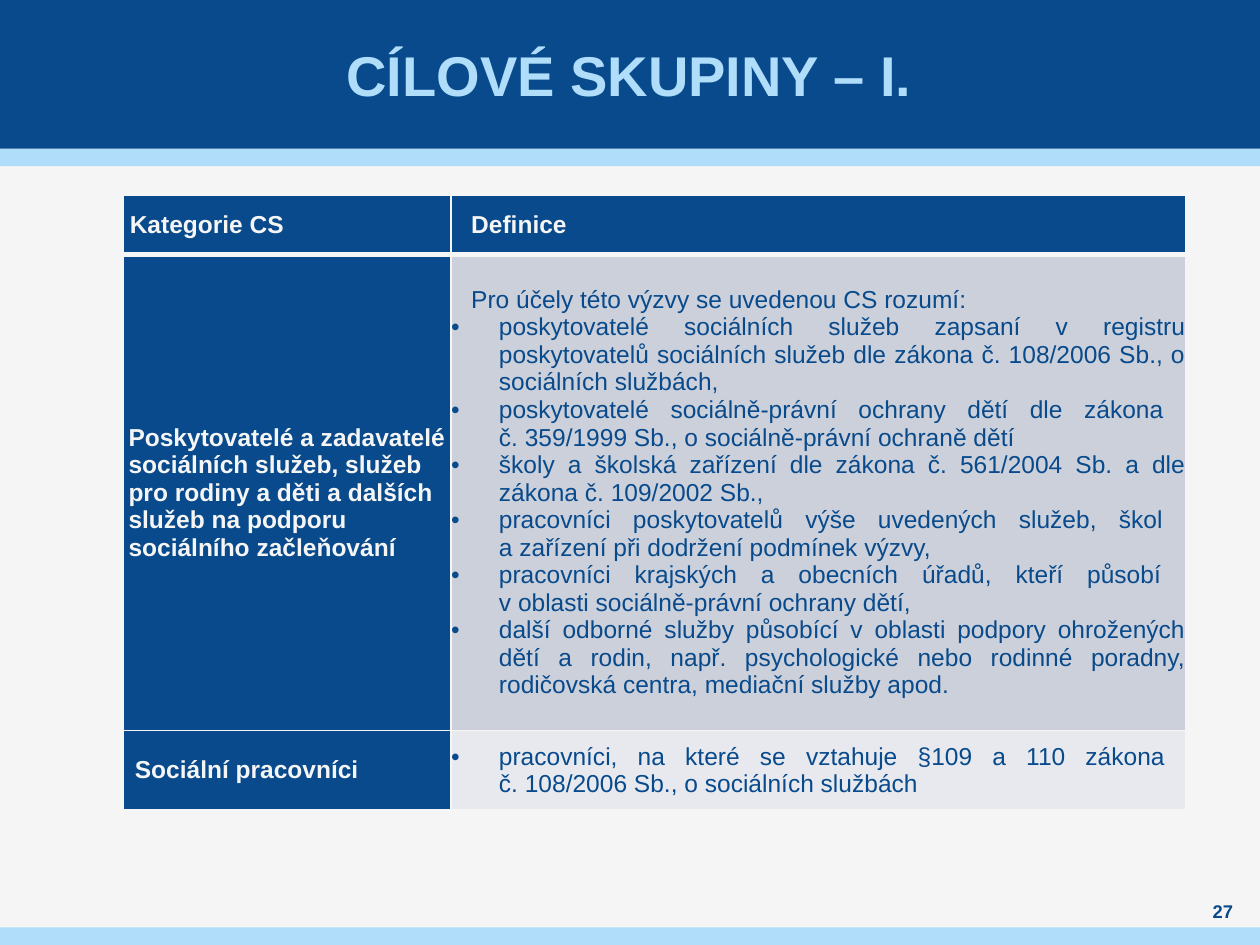
from dataclasses import dataclass

from lxml.etree import SubElement, fromstring
from pptx import Presentation
from pptx.dml.color import RGBColor
from pptx.enum.shapes import MSO_SHAPE as Shape
from pptx.enum.text import MSO_ANCHOR as Anchor, PP_ALIGN as Align
from pptx.oxml.ns import nsdecls, qn
from pptx.util import Inches, Pt

COLORS = {
    "navy": "084A8B",
    "sky": "AFDDFA",
    "paper": "F5F5F5",
    "gray": "CCD0DA",
    "light_gray": "E7E9EE",
}
FONT = "Arial"
BULLET_INDENT = 0.38


@dataclass
class Band:
    top: float
    height: float
    color: str


@dataclass
class Line:
    text: str
    indent: float = BULLET_INDENT
    bullet: bool = True


@dataclass
class Cell:
    lines: list[Line]
    fill: str
    color: str = "paper"
    bold: bool = True
    align: Align = Align.LEFT
    bottom_border: float = 1


def label(text: str, indent: float, **options) -> Cell:
    return Cell([Line(text, indent, False)], "navy", **options)


def definition(lines: list[Line], fill: str) -> Cell:
    return Cell(lines, fill, "navy", False, Align.JUSTIFY)


BANDS = [Band(1.18, 0.14, "sky"), Band(0, 1.18, "navy"), Band(7.36, 0.14, "sky")]
COLUMN_WIDTHS = [2.6, 5.83]
ROW_HEIGHTS = [0.47, 3.78, 0.63]
ROWS = [
    [
        label("Kategorie CS", 0.05, bottom_border=3),
        label("Definice", 0.16, bottom_border=3),
    ],
    [
        label("Poskytovatelé a zadavatelé sociálních služeb, služeb pro rodiny a děti "
              "a dalších služeb na podporu sociálního začleňování", 0.04),
        definition([
            Line("Pro účely této výzvy se uvedenou CS rozumí:", 0.16, False),
            Line("poskytovatelé sociálních služeb zapsaní v registru poskytovatelů "
                 "sociálních služeb dle zákona č. 108/2006 Sb., o sociálních službách,"),
            Line("poskytovatelé sociálně-právní ochrany dětí dle zákona \v"
                 "č. 359/1999 Sb., o sociálně-právní ochraně dětí"),
            Line("školy a školská zařízení dle zákona č. 561/2004 Sb. a dle "
                 "zákona č. 109/2002 Sb.,"),
            Line("pracovníci poskytovatelů výše uvedených služeb, škol \v"
                 "a zařízení při dodržení podmínek výzvy,"),
            Line("pracovníci krajských a obecních úřadů, kteří působí \v"
                 "v oblasti sociálně-právní ochrany dětí,"),
            Line("další odborné služby působící v oblasti podpory ohrožených dětí a rodin, "
                 "např. psychologické nebo rodinné poradny, rodičovská centra, "
                 "mediační služby apod."),
        ], "gray"),
    ],
    [
        label("Sociální pracovníci", 0.09),
        definition([Line("pracovníci, na které se vztahuje §109 a 110 zákona \v"
                         "č. 108/2006 Sb., o sociálních službách")], "light_gray"),
    ],
]


def rgb(name: str) -> RGBColor:
    return RGBColor.from_string(COLORS[name])


def set_font(paragraph, size: float, color: str, bold: bool) -> None:
    font = paragraph.font
    font.name, font.size, font.bold = FONT, Pt(size), bold
    font.color.rgb = rgb(color)


def add_band(slide, band: Band) -> None:
    shape = slide.shapes.add_shape(
        Shape.RECTANGLE, 0, Inches(band.top), Inches(10), Inches(band.height))
    shape.shadow.inherit = False
    shape.fill.solid()
    shape.fill.fore_color.rgb = rgb(band.color)
    shape.line.fill.background()


def add_text(slide, text: str, box: tuple, size: float, color: str) -> None:
    frame = slide.shapes.add_textbox(*map(Inches, box)).text_frame
    frame.word_wrap = True
    frame.vertical_anchor = Anchor.MIDDLE
    frame.margin_left = frame.margin_right = frame.margin_top = frame.margin_bottom = 0
    paragraph = frame.paragraphs[0]
    paragraph.text = text
    paragraph.alignment = Align.CENTER
    set_font(paragraph, size, color, True)


def set_borders(cell, bottom: float) -> None:
    properties = cell._tc.get_or_add_tcPr()
    widths = {"lnL": 1, "lnR": 1, "lnT": 1, "lnB": bottom}
    for position, (tag, width) in enumerate(widths.items()):
        properties.insert(position, fromstring(
            f'<a:{tag} {nsdecls("a")} w="{Pt(width)}"><a:solidFill>'
            f'<a:srgbClr val="{COLORS["paper"]}"/></a:solidFill></a:{tag}>'))


def fill_cell(cell, content: Cell, top_border: float = 1) -> None:
    cell.margin_left = cell.margin_right = cell.margin_top = cell.margin_bottom = 0
    cell.vertical_anchor = Anchor.MIDDLE
    cell.fill.solid()
    cell.fill.fore_color.rgb = rgb(content.fill)
    set_borders(cell, content.bottom_border)
    frame = cell.text_frame
    for number, line in enumerate(content.lines):
        paragraph = frame.add_paragraph() if number else frame.paragraphs[0]
        paragraph.text = line.text
        paragraph.alignment = content.align
        properties = paragraph._p.get_or_add_pPr()
        properties.set("marL", str(Inches(line.indent)))
        properties.set("indent", str(-Inches(line.indent) if line.bullet else 0))
        if line.bullet:
            SubElement(properties, qn("a:buFont"), typeface=FONT)
            SubElement(properties, qn("a:buChar"), char="•")
        set_font(paragraph, 14, content.color, content.bold)


def add_groups_table(slide) -> None:
    table = slide.shapes.add_table(
        len(ROWS), len(COLUMN_WIDTHS), Inches(0.98), Inches(1.55),
        Inches(sum(COLUMN_WIDTHS)), Inches(sum(ROW_HEIGHTS))).table
    table.first_row = table.horz_banding = False
    for column, width in zip(table.columns, COLUMN_WIDTHS):
        column.width = Inches(width)
    for row, height, contents in zip(table.rows, ROW_HEIGHTS, ROWS):
        row.height = Inches(height)
        for cell, content in zip(row.cells, contents):
            fill_cell(cell, content)


def main() -> None:
    presentation = Presentation()
    presentation.slide_width, presentation.slide_height = Inches(10), Inches(7.5)
    slide = presentation.slides.add_slide(presentation.slide_layouts[6])
    slide.background.fill.solid()
    slide.background.fill.fore_color.rgb = rgb("paper")

    # Header and footer bands
    for band in BANDS:
        add_band(slide, band)

    # Title, target groups and page number
    add_text(slide, "CÍLOVÉ SKUPINY – I.", (0.39, 0, 9.21, 1.18), 32, "sky")
    add_groups_table(slide)
    add_text(slide, "27", (9.45, 7.13, 0.51, 0.2), 10.5, "navy")

    presentation.save("out.pptx")


if __name__ == "__main__":
    main()
